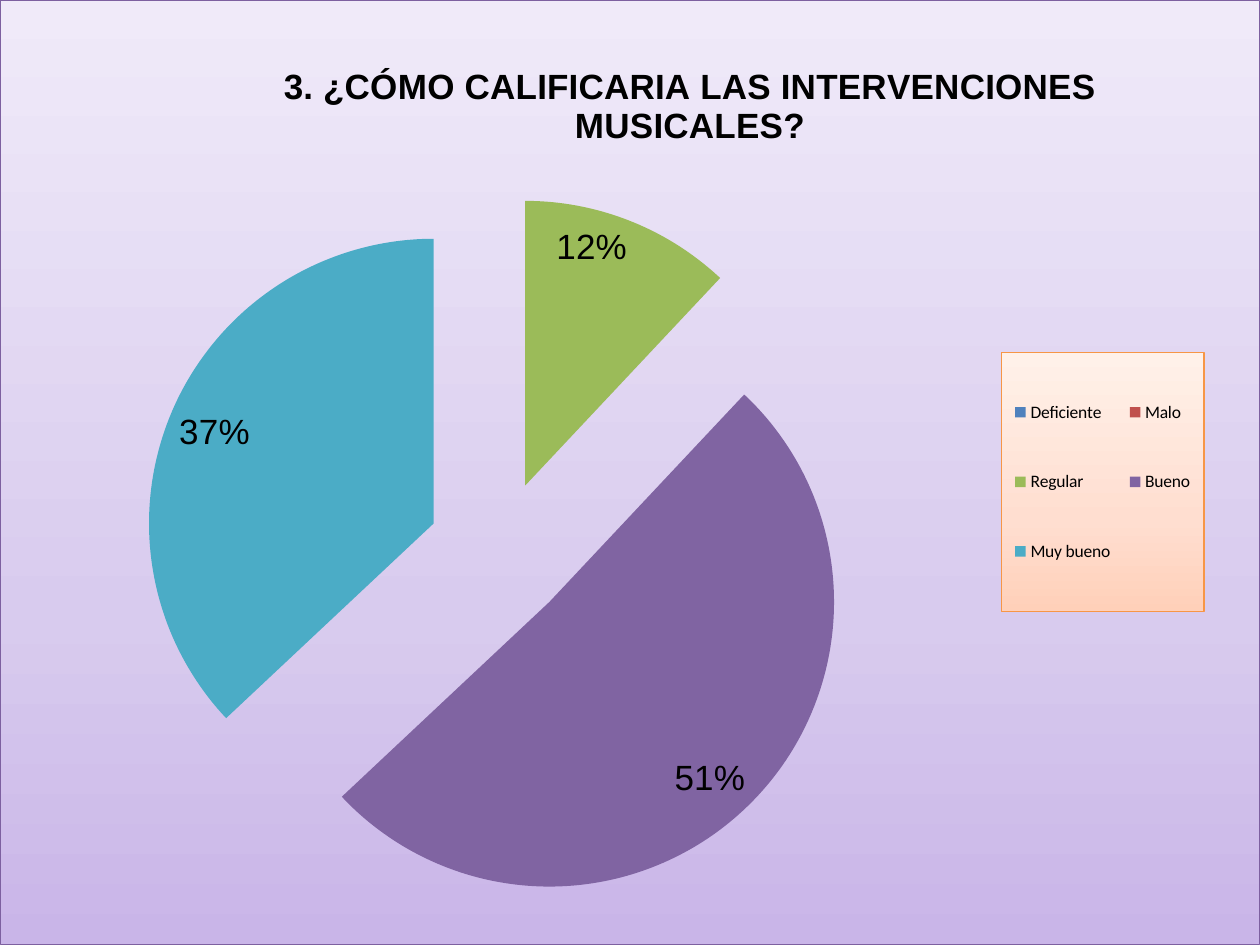
from lxml.etree import fromstring
from pptx import Presentation
from pptx.chart.data import CategoryChartData
from pptx.dml.color import RGBColor
from pptx.enum.chart import XL_CHART_TYPE, XL_LABEL_POSITION, XL_LEGEND_POSITION
from pptx.oxml import parse_xml
from pptx.oxml.ns import nsdecls, qn
from pptx.util import Pt

COLORS = {
    "text": "000000",
    "chart_border": "7D60A0",
    "legend_border": "F79646",
    "Deficiente": "4F81BD",
    "Malo": "C0504D",
    "Regular": "9BBB59",
    "Bueno": "8064A2",
    "Muy bueno": "4BACC6",
}
CHART_STOPS = [(0, "C9B5E8"), (35, "D8CBEE"), (100, "F0EAF9")]
LEGEND_STOPS = [(0, "FFD0B9"), (35, "FFDED0"), (100, "FFF1E9")]
RATINGS = {"Deficiente": 0, "Malo": 0, "Regular": 12, "Bueno": 51, "Muy bueno": 37}
TITLE = "3. ¿CÓMO CALIFICARIA LAS INTERVENCIONES MUSICALES?"
EXPLOSION = 25


def element(tag, body="", attrs=""):
    return parse_xml(f'<c:{tag} {nsdecls("c", "a")} {attrs}>{body}</c:{tag}>')


def gradient_box(stops, border):
    gs = "".join(
        f'<a:gs pos="{pos * 1000}"><a:srgbClr val="{color}"/></a:gs>' for pos, color in stops
    )
    return element(
        "spPr",
        f'<a:gradFill rotWithShape="1"><a:gsLst>{gs}</a:gsLst>'
        '<a:lin ang="16200000" scaled="0"/></a:gradFill>'
        f'<a:ln w="{Pt(0.75)}"><a:solidFill><a:srgbClr val="{border}"/></a:solidFill></a:ln>',
    )


def set_layout(parent, before, target="", **fractions):
    for old in parent.findall(qn("c:layout")):
        parent.remove(old)
    parts = f'<c:layoutTarget val="{target}"/>' if target else ""
    parts += "".join(f'<c:{k}Mode val="edge"/>' for k in "xy")
    parts += "".join(f'<c:{k} val="{v}"/>' for k, v in fractions.items())
    layout = element("layout", f"<c:manualLayout>{parts}</c:manualLayout>")
    parent.find(qn(before)).addprevious(layout)


def set_font(font, name, size, bold=False):
    font.name, font.size, font.bold = name, Pt(size), bold
    font.color.rgb = RGBColor.from_string(COLORS["text"])


def style_title(chart):
    title = chart.chart_title
    p = title.text_frame.paragraphs[0]
    p.text = TITLE
    set_font(p.font, "Arial", 20, True)
    title.include_in_layout = False if hasattr(title, "include_in_layout") else None
    xml = chart._chartSpace.chart.find(qn("c:title"))
    for old in xml.findall(qn("c:overlay")):
        xml.remove(old)
    xml.find(qn("c:tx")).addnext(element("overlay", attrs='val="0"'))
    set_layout(xml, "c:overlay", x=0.22, y=0.06)


def style_legend(chart):
    chart.has_legend = True
    legend = chart.legend
    legend.position = XL_LEGEND_POSITION.RIGHT
    legend.include_in_layout = False
    set_font(legend.font, "Calibri", 10)
    xml = chart._chartSpace.chart.find(qn("c:legend"))
    set_layout(xml, "c:overlay", x=0.795, y=0.373, w=0.161, h=0.274)
    xml.find(qn("c:overlay")).addnext(gradient_box(LEGEND_STOPS, COLORS["legend_border"]))


def style_slices(chart):
    plot = chart.plots[0]
    plot.vary_by_categories = True
    series = plot.series[0]
    labels = series.data_labels
    labels.show_percentage, labels.show_value = True, False
    labels.number_format, labels.number_format_is_linked = "0%", False
    labels.position = XL_LABEL_POSITION.INSIDE_END
    set_font(labels.font, "Arial", 20)
    dlbls = series._element.find(qn("c:dLbls"))
    for i, (rating, value) in enumerate(RATINGS.items()):
        fill = series.points[i].format.fill
        fill.solid()
        fill.fore_color.rgb = RGBColor.from_string(COLORS[rating])
        if not value:
            dlbls.insert(i, element("dLbl", f'<c:idx val="{i}"/><c:delete val="1"/>'))
    points = series._element.findall(qn("c:dPt"))
    for anchor in [points[0], *(point.find(qn("c:spPr")) for point in points)]:
        anchor.addprevious(element("explosion", attrs=f'val="{EXPLOSION}"'))


def add_ratings_chart(s, left, top, width, height):
    data = CategoryChartData()
    data.categories = list(RATINGS)
    data.add_series("Series 1", list(RATINGS.values()))
    chart = s.shapes.add_chart(XL_CHART_TYPE.PIE, left, top, width, height, data).chart
    set_font(chart.font, "Calibri", 10)
    style_title(chart)
    style_legend(chart)
    style_slices(chart)
    space = chart._chartSpace
    set_layout(space.chart.plotArea, "c:pieChart", "inner", x=0.03, y=0.207, w=0.732, h=0.754)
    space.chart.addnext(gradient_box(CHART_STOPS, COLORS["chart_border"]))


def main():
    prs = Presentation()
    prs.slide_width, prs.slide_height = Pt(720), Pt(540)
    s = prs.slides.add_slide(prs.slide_layouts[6])
    add_ratings_chart(s, Pt(0), Pt(0), Pt(720), Pt(540))
    prs.save("out.pptx")


if __name__ == "__main__":
    main()
